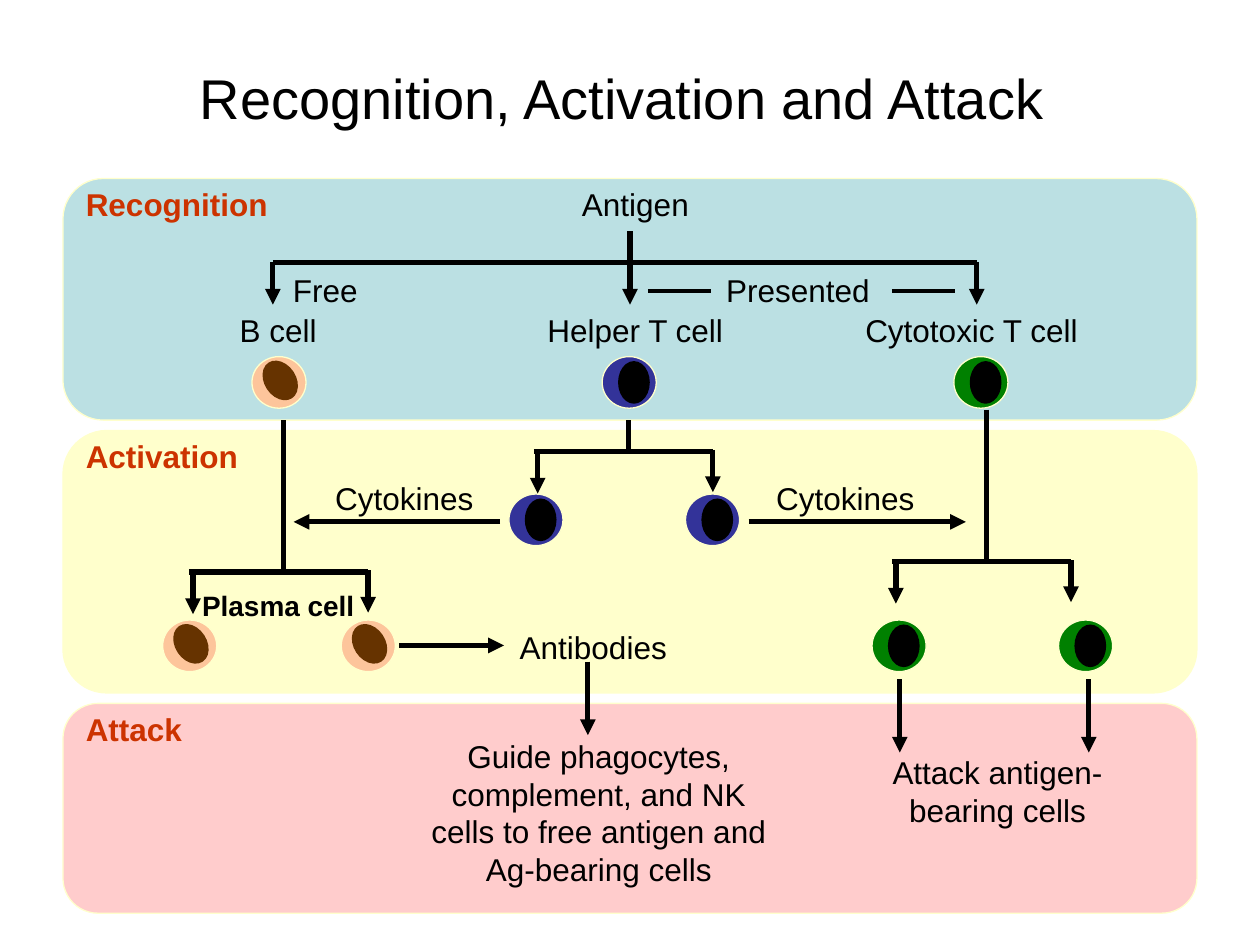
from dataclasses import dataclass

from lxml import etree
from pptx import Presentation
from pptx.dml.color import RGBColor
from pptx.enum.shapes import MSO_CONNECTOR, MSO_SHAPE
from pptx.enum.text import MSO_ANCHOR, MSO_AUTO_SIZE, PP_ALIGN
from pptx.oxml.ns import qn
from pptx.util import Cm, Pt

ROUNDED, OVAL = MSO_SHAPE.ROUNDED_RECTANGLE, MSO_SHAPE.OVAL
STRAIGHT = MSO_CONNECTOR.STRAIGHT
LEFT, CENTER = PP_ALIGN.LEFT, PP_ALIGN.CENTER
MIDDLE = MSO_ANCHOR.MIDDLE
FIT, FIXED = MSO_AUTO_SIZE.SHAPE_TO_FIT_TEXT, MSO_AUTO_SIZE.NONE


@dataclass(frozen=True)
class Theme:
    font: str = "Arial"
    ink: str = "000000"
    heading: str = "CC3300"
    edge: str = "FFFFCC"
    recognition: str = "BBE0E3"
    activation: str = "FFFFCC"
    attack: str = "FFCCCC"
    b_cell: str = "FDC59B"
    b_nucleus: str = "663300"
    helper: str = "333399"
    cytotoxic: str = "008000"
    title_size: int = 32
    text_size: int = 18
    small_size: int = 16
    edge_width: float = 0.75
    thin_width: float = 2.25
    line_width: float = 3


class DiagramSlide:
    def __init__(self, prs, theme):
        self.theme = theme
        self.s = prs.slides.add_slide(prs.slide_layouts[5])

    def set_text(self, tf, text, align=CENTER, **fmt):
        p = tf.paragraphs[0]
        p.alignment = align
        r = p.add_run()
        r.text = text
        color = fmt.pop("color", self.theme.ink)
        font = {"name": self.theme.font, "size": Pt(self.theme.text_size), "bold": False, **fmt}
        for key, value in font.items():
            setattr(r.font, key, value)
        r.font.color.rgb = RGBColor.from_string(color)

    def title(self, text, x, y, w, h):
        sp = self.s.shapes.title
        sp.left, sp.top, sp.width, sp.height = Cm(x), Cm(y), Cm(w), Cm(h)
        for key, value in {"vertical_anchor": MIDDLE, "auto_size": FIXED, "word_wrap": True}.items():
            setattr(sp.text_frame, key, value)
        self.set_text(sp.text_frame, text, size=Pt(self.theme.title_size))

    def text(self, text, x, y, w, h=1.02, **fmt):
        sp = self.s.shapes.add_textbox(Cm(x), Cm(y), Cm(w), Cm(h))
        for key, value in {"word_wrap": True, "auto_size": FIT}.items():
            setattr(sp.text_frame, key, value)
        self.set_text(sp.text_frame, text, **fmt)

    def shape(self, kind, x, y, w, h, fill, edge=None, parent=None):
        shapes = parent.shapes if parent is not None else self.s.shapes
        sp = shapes.add_shape(kind, Cm(x), Cm(y), Cm(w), Cm(h))
        sp.shadow.inherit = False
        sp.fill.solid()
        sp.fill.fore_color.rgb = RGBColor.from_string(fill)
        if edge:
            sp.line.color.rgb = RGBColor.from_string(edge)
            sp.line.width = Pt(self.theme.edge_width)
        else:
            sp.line.fill.background()
        return sp

    def band(self, heading, y, h, fill):
        self.shape(ROUNDED, 1.27, y, 22.86, h, fill, self.theme.edge)
        self.text(heading, 1.48, y, 4.45, align=LEFT, bold=True, color=self.theme.heading)

    def cell(self, x, y, fill, nucleus, dx=0.32, dy=0.09, rotation=0):
        group = self.s.shapes.add_group_shape()
        self.shape(OVAL, x, y, 1.09, 1.04, fill, self.theme.edge, group)
        core = self.shape(OVAL, x + dx, y + dy, 0.64, 0.86, nucleus, parent=group)
        core.rotation = rotation

    def line(self, x1, y1, x2, y2, width=None, arrow=False):
        cxn = self.s.shapes.add_connector(STRAIGHT, Cm(x1), Cm(y1), Cm(x2), Cm(y2))
        cxn.line.color.rgb = RGBColor.from_string(self.theme.ink)
        cxn.line.width = Pt(width or self.theme.line_width)
        props = cxn.element.spPr
        if arrow:
            etree.SubElement(props.find(qn("a:ln")), qn("a:tailEnd"), type="triangle")
        etree.SubElement(props, qn("a:effectLst"))

    def arrow(self, x1, y1, x2, y2):
        self.line(x1, y1, x2, y2, arrow=True)

    def fork(self, x, top, y):
        self.line(x, top, x, y)
        self.line(x - 1.91, y, x + 1.7, y)
        self.arrow(x + 1.7, y - 0.03, x + 1.7, y + 0.82)
        self.arrow(x - 1.83, y, x - 1.83, y + 0.85)


def main():
    prs = Presentation()
    prs.slide_width, prs.slide_height = Cm(25.4), Cm(19.05)
    theme = Theme()
    d = DiagramSlide(prs, theme)

    d.title("Recognition, Activation and Attack ", 1.27, 0.76, 22.86, 2.41)
    d.band("Activation", 8.68, 5.29, theme.activation)
    d.band("Recognition", 3.6, 4.87, theme.recognition)
    d.band("Attack", 14.18, 4.23, theme.attack)

    cell_rows = (7.19, 9.96, 12.5)
    b_style = {"fill": theme.b_cell, "nucleus": theme.b_nucleus,
               "dx": 0.25, "dy": 0.05, "rotation": 326.6}
    helper_style = {"fill": theme.helper, "nucleus": theme.ink}
    cytotoxic_style = {"fill": theme.cytotoxic, "nucleus": theme.ink}
    families = [
        (b_style, 5.08, (3.28, 6.88), cell_rows[2]),
        (helper_style, 12.14, (10.26, 13.82), cell_rows[1]),
        (cytotoxic_style, 19.23, (17.58, 21.34), cell_rows[2]),
    ]
    for style, parent_x, daughters, daughter_y in families:
        d.cell(parent_x, cell_rows[0], **style)
        for x in daughters:
            d.cell(x, daughter_y, **style)

    for fork in [(5.72, 8.47, 11.53), (12.67, 8.47, 9.1), (19.89, 8.26, 11.32)]:
        d.fork(*fork)

    antigen_y, antigen_tip = 5.29, 6.14
    d.line(5.5, antigen_y, 19.69, antigen_y)
    for x, top in [(5.5, antigen_y), (12.7, 4.66), (19.69, antigen_y)]:
        d.arrow(x, top, x, antigen_tip)
    for x in (13.06, 17.98):
        d.line(x, 5.87, x + 1.27, 5.87, theme.thin_width)

    for x, top in [(11.85, 13.34), (18.14, 13.69), (21.95, 13.69)]:
        d.arrow(x, top, x, top + 1.48)
    for start, tip, y in [(10.08, 5.92, 10.52), (15.09, 19.47, 10.52), (8.05, 10.16, 13.01)]:
        d.arrow(start, y, tip, y)

    labels = [
        ("Antigen", 10.8, 3.6, 4.02),
        ("Free", 5.29, 5.34, 2.54),
        ("Presented", 14.18, 5.34, 3.81),
        ("B cell", 3.6, 6.14, 4.02),
        ("Helper T cell", 10.37, 6.14, 4.87),
        ("Cytotoxic T cell", 17.15, 6.14, 4.87),
        ("Cytokines", 6.14, 9.53, 4.02),
        ("Cytokines", 15.03, 9.53, 4.02),
        ("Antibodies", 9.95, 12.53, 4.02),
        ("Attack antigen-bearing cells", 17.36, 15.06, 5.5, 1.78),
        ("Guide phagocytes, complement, and NK cells to free antigen and Ag-bearing cells",
         8.26, 14.73, 7.62, 3.3),
    ]
    for label in labels:
        d.text(*label)
    d.text("Plasma cell", 3.6, 11.74, 4.02, 0.94, bold=True, size=Pt(theme.small_size))

    prs.save("out.pptx")


if __name__ == "__main__":
    main()
